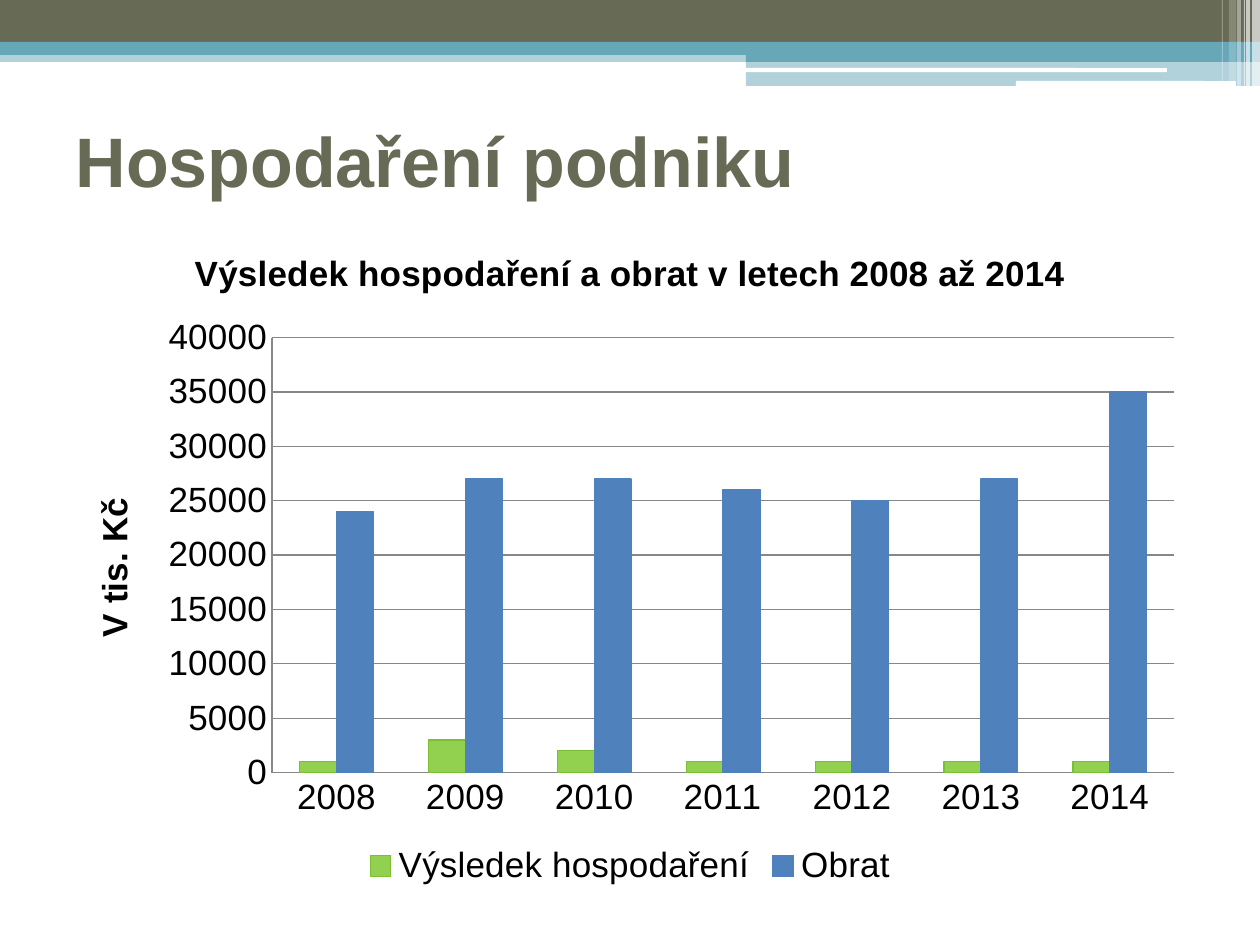
from lxml.etree import SubElement
from pptx import Presentation
from pptx.chart.data import CategoryChartData
from pptx.dml.color import RGBColor
from pptx.enum.chart import XL_CHART_TYPE, XL_LEGEND_POSITION, XL_TICK_MARK
from pptx.enum.shapes import MSO_SHAPE
from pptx.enum.text import MSO_ANCHOR, MSO_AUTO_SIZE, PP_ALIGN
from pptx.oxml.ns import qn
from pptx.util import Inches, Pt

SCALE = Inches(1) / 126
OLIVE = RGBColor(0x67, 0x6A, 0x55)
TEAL = RGBColor(0x66, 0xA7, 0xB8)
WHITE = RGBColor(0xFF, 0xFF, 0xFF)
BLACK = RGBColor(0x00, 0x00, 0x00)
GRAY = RGBColor(0x87, 0x87, 0x87)
GREEN = RGBColor(0x92, 0xD0, 0x50)
LEAF = RGBColor(0x7C, 0xBF, 0x33)
BLUE = RGBColor(0x4F, 0x81, 0xBD)

RECT = MSO_SHAPE.RECTANGLE
ROUND = MSO_SHAPE.ROUNDED_RECTANGLE
BANDS = [
    (RECT, (0, 50, 1260, 12), TEAL, 50),
    (RECT, (0, 0, 1260, 43), OLIVE, 100),
    (RECT, (0, 42, 1260, 13), TEAL, 100),
    (RECT, (746, 49, 514, 13), TEAL, 100),
    (RECT, (746, 61, 514, 25), TEAL, 50),
    (ROUND, (745, 68, 422, 4), WHITE, 100),
    (ROUND, (1016, 81, 220, 5), WHITE, 100),
]
STRIPES = [
    (1252, 8, 86, 65),
    (1246, 4, 86, 65),
    (1244, 1, 86, 60),
    (1237, 4, 86, 40),
    (1229, 7, 81, 20),
    (1222, 1, 81, 30),
]
YEARS = [str(year) for year in range(2008, 2015)]
SERIES = [
    ("Výsledek hospodaření", (1000, 3000, 2000, 1000, 1000, 1000, 1000), GREEN, LEAF),
    ("Obrat", (24000, 27000, 27000, 26000, 25000, 27000, 35000), BLUE, BLUE),
]
HEAD = {"name": "Arial", "size": Pt(40), "bold": True}
PLAIN = {"name": "Arial", "size": Pt(20), "bold": False}
BOLD = {**PLAIN, "bold": True}


def px(*marks):
    """Turn pixel lengths into EMU."""
    return [round(mark * SCALE) for mark in marks]


def style(font, form, color):
    """Set font values from a dict, then the colour."""
    for key, value in form.items():
        setattr(font, key, value)
    font.color.rgb = color


def add_band(slide, kind, box, color, alpha):
    """Add one plain band, clear when alpha is below 100."""
    band = slide.shapes.add_shape(kind, *px(*box))
    band.shadow.inherit = False
    band.fill.solid()
    band.fill.fore_color.rgb = color
    band.line.fill.background()
    if alpha < 100:
        tone = band.fill._xPr.find(".//" + qn("a:srgbClr"))
        SubElement(tone, qn("a:alpha"), val=str(alpha * 1000))


def set_title(slide, text):
    """Place and format the title of the slide."""
    title = slide.shapes.title
    title.left, title.top, title.width, title.height = px(63, 86, 1134, 147)
    frame = title.text_frame
    form = {"text": text, "vertical_anchor": MSO_ANCHOR.MIDDLE,
            "word_wrap": True, "auto_size": MSO_AUTO_SIZE.NONE}
    for key, value in form.items():
        setattr(frame, key, value)
    line = frame.paragraphs[0]
    line.alignment = PP_ALIGN.LEFT
    style(line.runs[0].font, HEAD, OLIVE)


def label(owner, text):
    """Write a bold title on a chart or an axis."""
    frame = owner.text_frame
    frame.text = text
    style(frame.paragraphs[0].runs[0].font, BOLD, BLACK)
    return frame


def set_axis(axis):
    """Format the labels and the line of an axis."""
    axis.major_tick_mark = axis.minor_tick_mark = XL_TICK_MARK.NONE
    style(axis.tick_labels.font, PLAIN, BLACK)
    axis.format.line.color.rgb = GRAY


def add_graph(slide):
    """Add the column chart."""
    data = CategoryChartData()
    data.categories = YEARS
    for name, values, *_ in SERIES:
        data.add_series(name, values)
    chart = slide.shapes.add_chart(
        XL_CHART_TYPE.COLUMN_CLUSTERED, *px(63, 224, 1134, 669), data).chart
    style(chart.font, {"name": "Cambria", "size": Pt(12)}, BLACK)
    label(chart.chart_title, "Výsledek hospodaření a obrat v letech 2008 až 2014")
    chart.chart_title.include_in_layout = False

    plot = chart.plots[0]
    plot.gap_width, plot.overlap, plot.vary_by_categories = 150, 0, False
    for item, (_, _, fill, edge) in zip(plot.series, SERIES):
        item.format.fill.solid()
        item.format.fill.fore_color.rgb = fill
        item.format.line.color.rgb = edge
        item.format.line.width = Pt(0.75)

    scale = chart.value_axis
    for axis in (chart.category_axis, scale):
        set_axis(axis)
    scale.minimum_scale, scale.maximum_scale, scale.major_unit = 0, 40000, 5000
    scale.major_gridlines.format.line.color.rgb = GRAY
    frame = label(scale.axis_title, "V tis. Kč")
    frame._txBody.bodyPr.set("rot", "-5400000")

    chart.has_legend = True
    chart.legend.position = XL_LEGEND_POSITION.BOTTOM
    chart.legend.include_in_layout = False
    style(chart.legend.font, PLAIN, BLACK)


def main():
    """Build and save the slide."""
    deck = Presentation()
    deck.slide_width, deck.slide_height = px(1260, 945)
    slide = deck.slides.add_slide(deck.slide_layouts[5])
    for band in BANDS:
        add_band(slide, *band)
    for left, width, height, alpha in STRIPES:
        add_band(slide, RECT, (left, 0, width, height), WHITE, alpha)
    set_title(slide, "Hospodaření podniku")
    add_graph(slide)
    deck.save("out.pptx")


if __name__ == "__main__":
    main()
